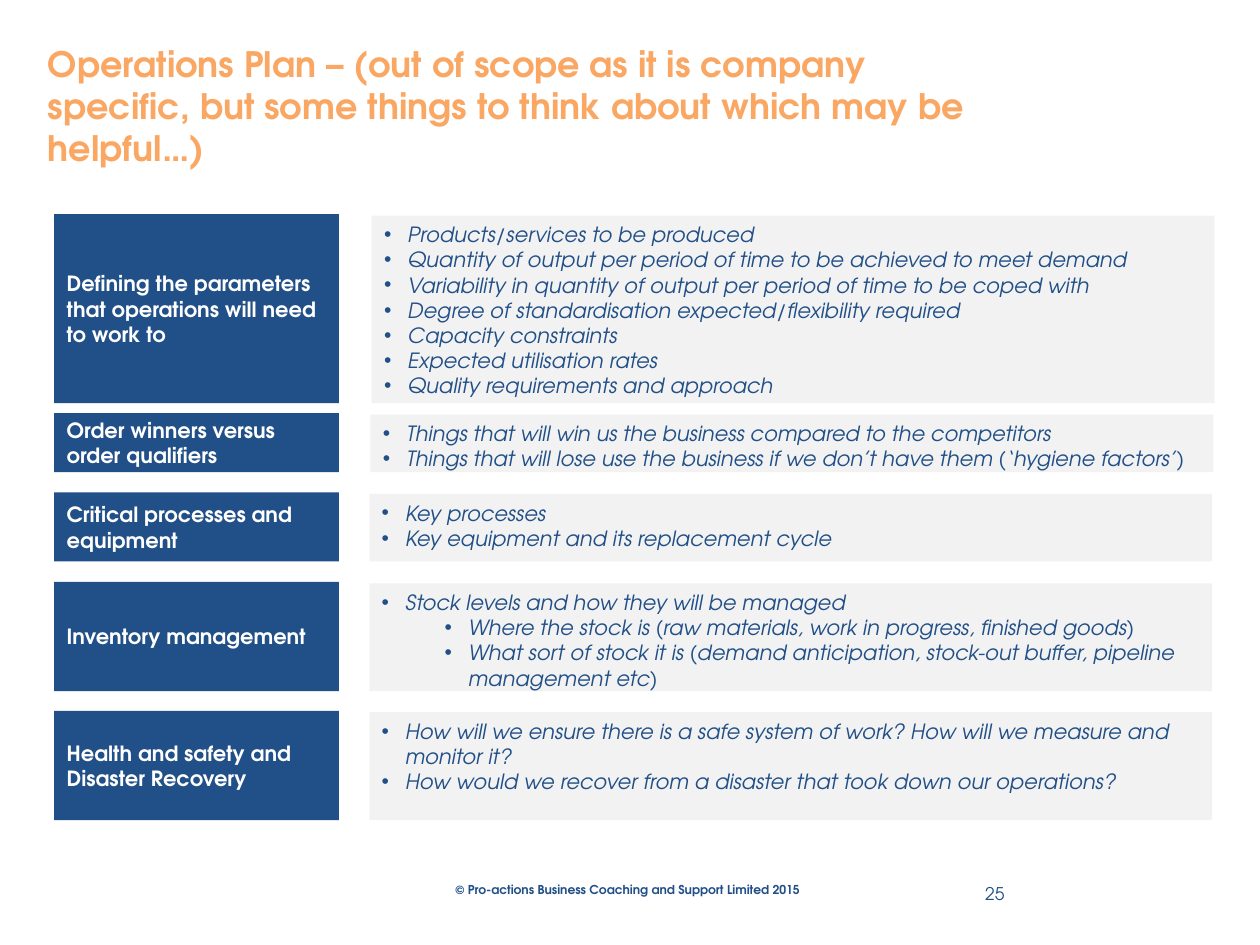
from dataclasses import dataclass

from lxml import etree
from pptx import Presentation
from pptx.dml.color import RGBColor
from pptx.enum.shapes import MSO_SHAPE
from pptx.enum.text import MSO_ANCHOR, MSO_AUTO_SIZE, PP_ALIGN
from pptx.oxml.ns import qn
from pptx.util import Pt

RECTANGLE = MSO_SHAPE.RECTANGLE
TOP, MIDDLE = MSO_ANCHOR.TOP, MSO_ANCHOR.MIDDLE
LEFT, RIGHT = PP_ALIGN.LEFT, PP_ALIGN.RIGHT
NO_FIT = MSO_AUTO_SIZE.NONE
TITLE_ONLY = 5


@dataclass(frozen=True)
class Theme:
    face: str = "TeX Gyre Adventor"
    blue: RGBColor = RGBColor(0x21, 0x4F, 0x87)
    orange: RGBColor = RGBColor(0xF9, 0xA7, 0x63)
    grey: RGBColor = RGBColor(0xF2, 0xF2, 0xF2)
    white: RGBColor = RGBColor(0xFF, 0xFF, 0xFF)
    title_size: int = 20
    body_size: int = 12
    number_size: int = 10
    footer_size: int = 7


THEME = Theme()

TOPIC_LEFT, TOPIC_WIDTH = 31, 162.7
PANEL_WIDTH, PANEL_DROP = 481.7, 0.8
BULLET_INDENT, LEVEL_STEP = 13.5, 36

# Top, height, panel left, topic, points as (level, wording)
ROWS = [
    (122.4, 108, 212.4, "Defining the parameters that operations will need to work to", [
        (0, "Products/services to be produced"),
        (0, "Quantity of output per period of time to be achieved to meet demand"),
        (0, "Variability in quantity of output per period of time to be coped with"),
        (0, "Degree of standardisation expected/flexibility required"),
        (0, "Capacity constraints"),
        (0, "Expected utilisation rates"),
        (0, "Quality requirements and approach"),
    ]),
    (236.1, 33.8, 211.7, "Order winners versus order qualifiers", [
        (0, "Things that will win us the business compared to the competitors"),
        (0, "Things that will lose use the business if we don’t have them (‘hygiene factors’)"),
    ]),
    (281.4, 39.5, 211, "Critical processes and equipment", [
        (0, "Key processes"),
        (0, "Key equipment and its replacement cycle"),
    ]),
    (332.5, 62.5, 211, "Inventory management", [
        (0, "Stock levels and how they will be managed"),
        (1, "Where the stock is (raw materials, work in progress, finished goods)"),
        (1, "What sort of stock it is (demand anticipation, stock-out buffer, "
            "pipeline management etc)"),
    ]),
    (406.2, 62.5, 211, "Health and safety and Disaster Recovery", [
        (0, "How will we ensure there is a safe system of work? "
            "How will we measure and monitor it?"),
        (0, "How would we recover from a disaster that took down our operations?"),
    ]),
]


def style(para, size, color, bold=False, italic=False, align=LEFT):
    para.alignment = align
    font = para.font
    font.name, font.size = THEME.face, Pt(size)
    font.bold, font.italic = bold, italic
    font.color.rgb = color


def add_bullet(para, level):
    para.level = level
    props = para._p.get_or_add_pPr()
    props.set("marL", str(Pt(BULLET_INDENT + level * LEVEL_STEP)))
    props.set("indent", str(-Pt(BULLET_INDENT)))
    font = etree.SubElement(props, qn("a:buFont"))
    font.set("typeface", "Arial")
    etree.SubElement(props, qn("a:buChar")).set("char", "•")


def add_block(page, left, top, width, height, fill, anchor):
    """Add a plain filled rectangle and return its text frame."""
    block = page.shapes.add_shape(RECTANGLE, Pt(left), Pt(top), Pt(width), Pt(height))
    block.shadow.inherit = False
    block.fill.solid()
    block.fill.fore_color.rgb = fill
    block.line.fill.background()
    frame = block.text_frame
    frame.word_wrap = True
    frame.vertical_anchor = anchor
    return frame


def add_title(page, left, top, width, height):
    title = page.shapes.title
    title.left, title.top = Pt(left), Pt(top)
    title.width, title.height = Pt(width), Pt(height)
    frame = title.text_frame
    frame.text = ("Operations Plan – (out of scope as it is company specific, "
                  "but some things to think about which may be helpful…)")
    frame.word_wrap = True
    frame.auto_size = NO_FIT
    frame.vertical_anchor = TOP
    style(frame.paragraphs[0], THEME.title_size, THEME.orange, bold=True)


def add_topic(page, left, top, width, height, topic):
    frame = add_block(page, left, top, width, height, THEME.blue, MIDDLE)
    frame.text = topic
    style(frame.paragraphs[0], THEME.body_size, THEME.white, bold=True)


def add_panel(page, left, top, width, height, points):
    frame = add_block(page, left, top, width, height, THEME.grey, TOP)
    frame.text = "\n".join(wording for _, wording in points)
    for para, (level, _) in zip(frame.paragraphs, points):
        add_bullet(para, level)
        style(para, THEME.body_size, THEME.blue, italic=True)


def add_note(page, left, top, width, height, wording, size, wrap=True, **look):
    box = page.shapes.add_textbox(Pt(left), Pt(top), Pt(width), Pt(height))
    frame = box.text_frame
    frame.text = wording
    frame.word_wrap = wrap
    frame.vertical_anchor = MIDDLE
    style(frame.paragraphs[0], size, THEME.blue, **look)


def main():
    deck = Presentation()
    deck.slide_width, deck.slide_height = Pt(720), Pt(540)
    page = deck.slides.add_slide(deck.slide_layouts[TITLE_ONLY])
    add_title(page, 20.2, 20.9, 561.6, 79.9)
    for top, height, panel_left, topic, points in ROWS:
        add_topic(page, TOPIC_LEFT, top, TOPIC_WIDTH, height, topic)
        add_panel(page, panel_left, top + PANEL_DROP, PANEL_WIDTH,
                  height - PANEL_DROP, points)
    add_note(page, 253.2, 500.4, 215.3, 15.8,
             "© Pro-actions Business Coaching and Support Limited 2015",
             THEME.footer_size, wrap=False, bold=True)
    add_note(page, 542.9, 496.1, 38.2, 28.8, "25", THEME.number_size, align=RIGHT)
    deck.save("out.pptx")


if __name__ == "__main__":
    main()
